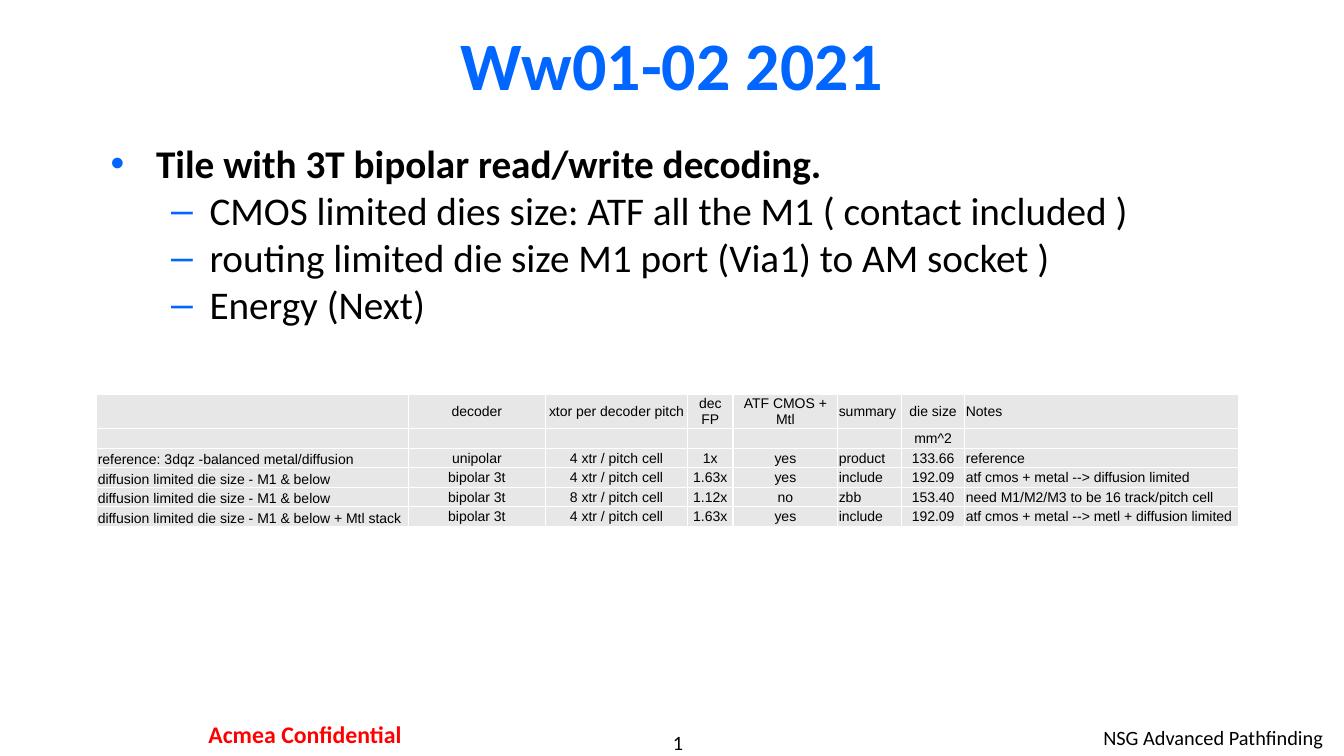
"""Build the Ww01-02 2021 tile decoding status slide."""
from lxml import etree
from pptx import Presentation
from pptx import util as u
from pptx.dml.color import RGBColor
from pptx.enum import text
from pptx.oxml.ns import qn

BLACK = RGBColor(0x00, 0x00, 0x00)
BLUE = RGBColor(0x00, 0x66, 0xFF)
RED = RGBColor(0xFF, 0x00, 0x00)
GREY = RGBColor(0xE7, 0xE7, 0xE7)
WHITE = RGBColor(0xFF, 0xFF, 0xFF)
LEFT, CENTER, RIGHT = text.PP_ALIGN.LEFT, text.PP_ALIGN.CENTER, text.PP_ALIGN.RIGHT
TOP, MIDDLE, BOTTOM = text.MSO_ANCHOR.TOP, text.MSO_ANCHOR.MIDDLE, text.MSO_ANCHOR.BOTTOM

prs = Presentation()
prs.slide_width, prs.slide_height = u.Inches(13.33), u.Inches(7.5)
COL, ROW = prs.slide_width / 100, prs.slide_height / 100
s = prs.slides.add_slide(prs.slide_layouts[6])


def write(p, words, size=14.5, font="Calibri", color=BLACK, bold=False, align=LEFT):
    """Put one formatted run into a paragraph."""
    p.alignment = align
    r = p.add_run()
    r.text = words
    r.font.size, r.font.name, r.font.bold = u.Pt(size), font, bold
    r.font.color.rgb = color


def add_box(left, top, width, height, inset=(0.1, 0.05), anchor=TOP):
    """Add a text box placed in percent of the slide and return its frame."""
    sp = s.shapes.add_textbox(int(left * COL), int(top * ROW), int(width * COL), int(height * ROW))
    tf = sp.text_frame
    tf.word_wrap = True
    tf.vertical_anchor = anchor
    tf.margin_left = tf.margin_right = u.Inches(inset[0])
    tf.margin_top = tf.margin_bottom = u.Inches(inset[1])
    return tf


tf = add_box(41.7, 96.53, 17.5, 3.2, inset=(0, 0))
write(tf.paragraphs[0], "1", align=CENTER)
tf = add_box(66.24, 95.33, 32.93, 4.67)
write(tf.paragraphs[0], "NSG Advanced Pathfinding", align=RIGHT)
tf = add_box(11.63, 94.4, 22.13, 5.47, inset=(0.12, 0.06))
write(tf.paragraphs[0], "Acmea Confidential", size=17, color=RED, bold=True, align=CENTER)
tf = add_box(7.5, 2.27, 85, 12.27, anchor=MIDDLE)
write(tf.paragraphs[0], "Ww01-02 2021", size=48.5, color=BLUE, bold=True, align=CENTER)

points = [
    (0, "Tile with 3T bipolar read/write decoding."),
    (1, "CMOS limited dies size: ATF all the M1 ( contact included )"),
    (1, "routing limited die size M1 port (Via1) to AM socket )"),
    (1, "Energy (Next)"),
]
levels = [("•", 0.45, -0.45), ("–", 0.98, -0.38)]
tf = add_box(7.5, 17.73, 85, 29.6)
for i, (level, words) in enumerate(points):
    p = tf.add_paragraph() if i else tf.paragraphs[0]
    p.level = level
    mark, margin, indent = levels[level]
    pPr = p._p.get_or_add_pPr()
    pPr.set("marL", str(u.Inches(margin)))
    pPr.set("indent", str(u.Inches(indent)))
    tint = etree.SubElement(pPr, qn("a:buClr"))
    etree.SubElement(tint, qn("a:srgbClr"), val=str(BLUE))
    etree.SubElement(pPr, qn("a:buFont"), typeface="Arial")
    etree.SubElement(pPr, qn("a:buChar"), char=mark)
    write(p, words, size=28, bold=level == 0)

widths = [23.18, 10.2, 10.58, 3.38, 7.8, 4.73, 4.73, 20.4]
heights = [4.27] + [2.58] * 5
aligns = [LEFT, CENTER, CENTER, CENTER, CENTER, LEFT, CENTER, LEFT]
below = "diffusion limited die size - M1 & below"
rows = [
    ["", "decoder", "xtor per decoder pitch", "dec FP", "ATF CMOS + Mtl", "summary", "die size", "Notes"],
    ["", "", "", "", "", "", "mm^2", ""],
    ["reference: 3dqz -balanced metal/diffusion", "unipolar", "4 xtr / pitch cell", "1x", "yes",
     "product", "133.66", "reference"],
    [below, "bipolar 3t", "4 xtr / pitch cell", "1.63x", "yes",
     "include", "192.09", "atf cmos + metal --> diffusion limited"],
    [below, "bipolar 3t", "8 xtr / pitch cell", "1.12x", "no",
     "zbb", "153.40", "need M1/M2/M3 to be 16 track/pitch cell"],
    [below + " + Mtl stack", "bipolar 3t", "4 xtr / pitch cell", "1.63x", "yes",
     "include", "192.09", "atf cmos + metal --> metl + diffusion limited"],
]
table = s.shapes.add_table(len(rows), len(widths), int(7.2 * COL), int(52.13 * ROW),
                           int(sum(widths) * COL), int(sum(heights) * ROW)).table
for column, width in zip(table.columns, widths):
    column.width = int(width * COL)
for row, height in zip(table.rows, heights):
    row.height = int(height * ROW)
for i, row in enumerate(rows):
    for j, words in enumerate(row):
        cell = table.cell(i, j)
        cell.margin_left = cell.margin_right = cell.margin_top = u.Inches(0.01)
        cell.margin_bottom = 0
        cell.vertical_anchor = MIDDLE if j else BOTTOM
        tcPr = cell._tc.get_or_add_tcPr()
        for side in ("a:lnL", "a:lnR", "a:lnT", "a:lnB"):
            ln = etree.SubElement(tcPr, qn(side), w=str(u.Pt(1)))
            paint = etree.SubElement(ln, qn("a:solidFill"))
            etree.SubElement(paint, qn("a:srgbClr"), val=str(WHITE))
        cell.fill.solid()
        cell.fill.fore_color.rgb = GREY
        p = cell.text_frame.paragraphs[0]
        if words:
            write(p, words, size=10, font="Arial", align=aligns[j])
        else:
            etree.SubElement(p._p, qn("a:endParaRPr"), sz="1000")

prs.save("out.pptx")
